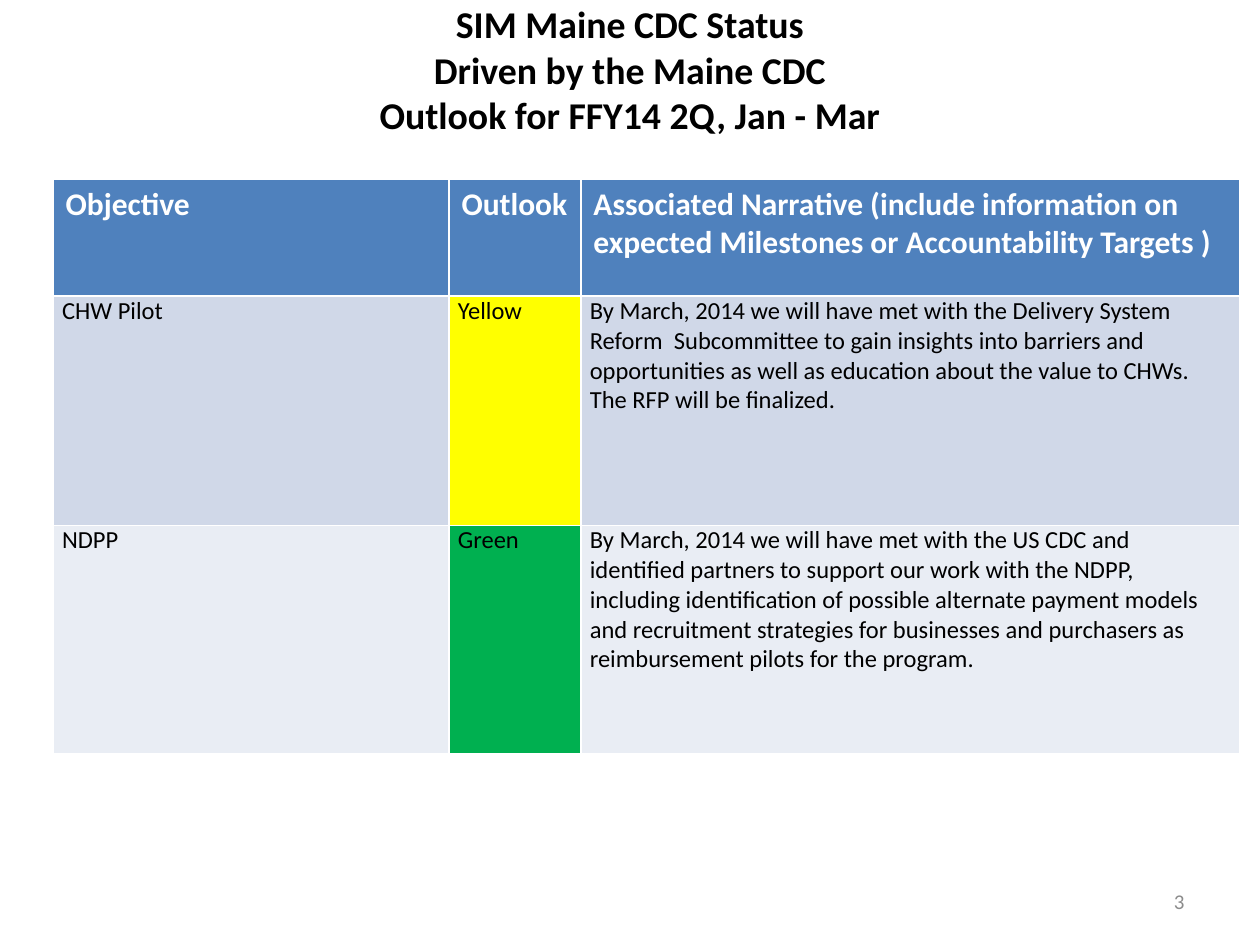
from dataclasses import dataclass

from pptx import Presentation
from pptx.dml.color import RGBColor
from pptx.enum.text import MSO_ANCHOR, PP_ALIGN
from pptx.slide import Slide
from pptx.table import _Cell
from pptx.text.text import _Paragraph
from pptx.util import Cm, Pt


@dataclass(frozen=True)
class Theme:
    font: str = "Calibri"
    ink: str = "000000"
    white: str = "FFFFFF"
    grey: str = "8C8C8C"
    blue: str = "4F81BD"
    bands: tuple[str, str] = ("D0D8E8", "E9EDF4")
    title: float = 21.6
    head: float = 18
    body: float = 14
    note: float = 12


@dataclass(frozen=True)
class Box:
    left: float
    top: float
    width: float
    height: float


@dataclass(frozen=True)
class Goal:
    name: str
    outlook: str
    color: str
    story: str


@dataclass(frozen=True)
class Style:
    size: float
    color: str
    bold: bool = False


THEME = Theme()
TITLE = ("SIM Maine CDC Status", "Driven by the Maine CDC", "Outlook for FFY14 2Q, Jan - Mar")
HEADS = (
    "Objective",
    "Outlook",
    "Associated Narrative (include information on expected Milestones or Accountability Targets )",
)
GOALS = (
    Goal("CHW Pilot", "Yellow", "FFFF00",
         "By March, 2014 we will have met with the Delivery System Reform  Subcommittee to gain "
         "insights into barriers and opportunities as well as education about the value to CHWs. "
         "The RFP will be finalized."),
    Goal("NDPP", "Green", "00B050",
         "By March, 2014 we will have met with the US CDC and identified partners to support our "
         "work with the NDPP,  including identification of possible alternate payment models and "
         "recruitment strategies for businesses and purchasers as reimbursement pilots for the "
         "program."),
)
COLS = (7.98, 2.66, 13.28)
ROWS = (2.36, 4.62, 4.6)


def add_run(para: _Paragraph, text: str, style: Style) -> None:
    run = para.add_run()
    run.text = text
    run.font.name = THEME.font
    run.font.size = Pt(style.size)
    run.font.bold = style.bold
    run.font.color.rgb = RGBColor.from_string(style.color)


def add_text(slide: Slide, box: Box, lines: tuple[str, ...], style: Style, align: PP_ALIGN) -> None:
    shape = slide.shapes.add_textbox(Cm(box.left), Cm(box.top), Cm(box.width), Cm(box.height))
    frame = shape.text_frame
    frame.word_wrap = True
    frame.vertical_anchor = MSO_ANCHOR.MIDDLE
    para = frame.paragraphs[0]
    para.alignment = align
    for i, line in enumerate(lines):
        if i:
            para.add_line_break()
        add_run(para, line, style)


def fill_cell(cell: _Cell, text: str, fill: str, style: Style) -> None:
    cell.fill.solid()
    cell.fill.fore_color.rgb = RGBColor.from_string(fill)
    add_run(cell.text_frame.paragraphs[0], text, style)


def add_goals(slide: Slide, left: float, top: float) -> None:
    """Draw the table; its default style supplies the white rules."""
    table = slide.shapes.add_table(
        len(ROWS), len(COLS), Cm(left), Cm(top), Cm(sum(COLS)), Cm(sum(ROWS))
    ).table
    for col, width in zip(table.columns, COLS):
        col.width = Cm(width)
    for row, height in zip(table.rows, ROWS):
        row.height = Cm(height)

    head = Style(THEME.head, THEME.white, True)
    for cell, text in zip(table.rows[0].cells, HEADS):
        fill_cell(cell, text, THEME.blue, head)

    body = Style(THEME.body, THEME.ink)
    for r, (goal, band) in enumerate(zip(GOALS, THEME.bands), 1):
        texts = (goal.name, goal.outlook, goal.story)
        fills = (band, goal.color, band)
        for cell, text, fill in zip(table.rows[r].cells, texts, fills):
            cell.margin_left = cell.margin_right = Cm(0.18)
            cell.margin_top = cell.margin_bottom = Cm(0)
            fill_cell(cell, text, fill, body)


def main() -> None:
    deck = Presentation()
    deck.slide_width, deck.slide_height = Cm(25.4), Cm(19.05)
    slide = deck.slides.add_slide(deck.slide_layouts[6])
    add_text(slide, Box(1.27, -0.2, 22.86, 3.18), TITLE,
             Style(THEME.title, THEME.ink, True), PP_ALIGN.CENTER)
    add_goals(slide, 1.07, 3.61)
    add_text(slide, Box(18.2, 17.66, 5.93, 1.01), ("3",),
             Style(THEME.note, THEME.grey), PP_ALIGN.RIGHT)
    deck.save("out.pptx")


if __name__ == "__main__":
    main()
